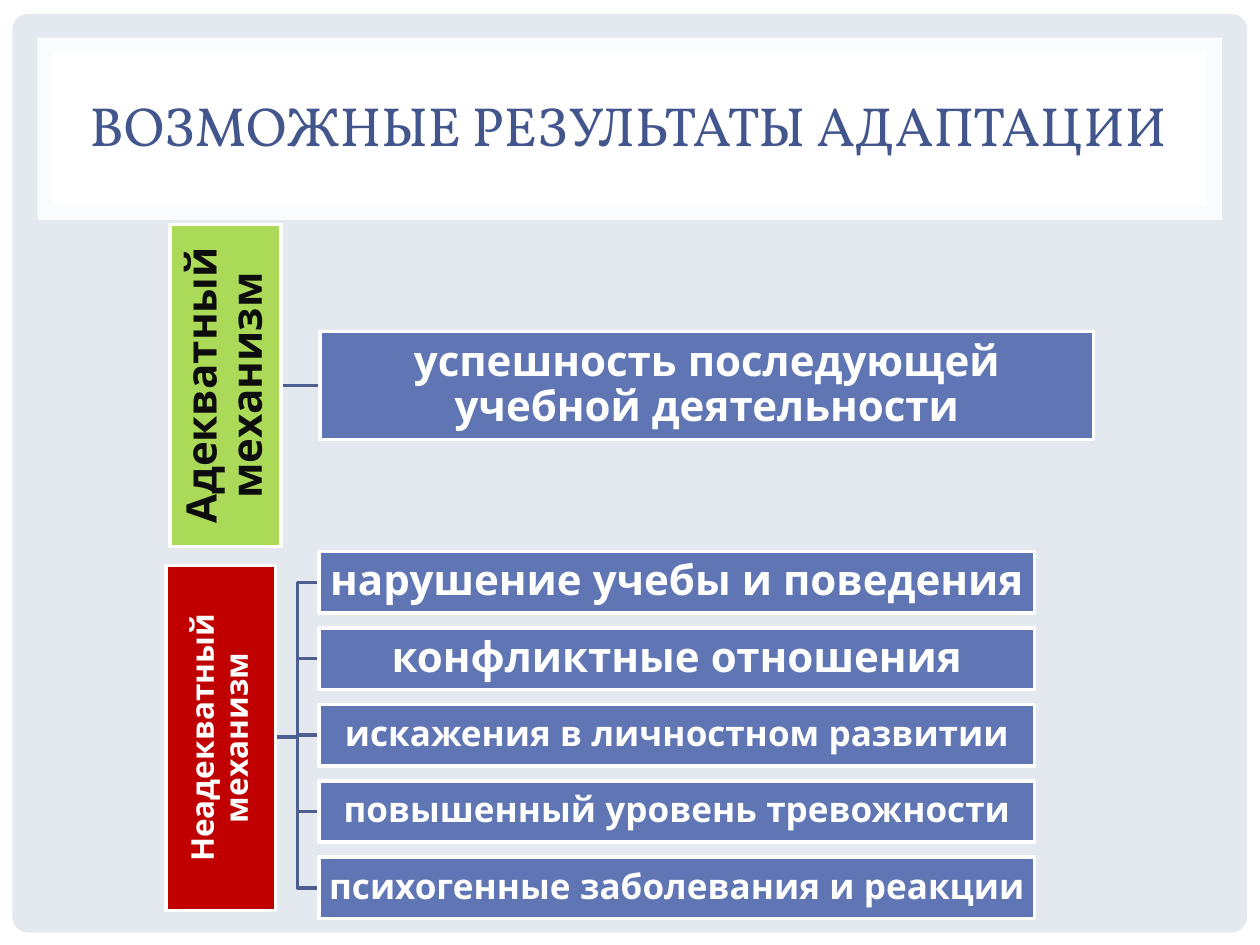
import pptx
import pptx.dml.color
import pptx.enum.shapes
import pptx.enum.text
import pptx.oxml
import pptx.oxml.ns
import pptx.util
from pptx.util import Cm

COLORS = {
    "paper": "E4E9EF",
    "white": "FFFFFF",
    "title": "42568D",
    "branch": "4D5E90",
    "outcome": "6076B4",
    "adequate": "ABD958",
    "inadequate": "C00000",
    "ink": "0D0D0D",
}
OUTCOMES = [
    ("нарушение учебы и поведения", 24),
    ("конфликтные отношения", 24),
    ("искажения в личностном развитии", 20),
    ("повышенный уровень тревожности", 20),
    ("психогенные заболевания и реакции", 20),
]
SHAPES = pptx.enum.shapes.MSO_SHAPE


def color(name):
    """Return the palette colour with this name."""
    return pptx.dml.color.RGBColor.from_string(COLORS[name])


def add_panel(page, kind, place, fill, alpha=None):
    """Add a borderless filled shape, optionally translucent (percent)."""
    panel = page.shapes.add_shape(kind, *map(Cm, place))
    panel.shadow.inherit = False
    panel.fill.solid()
    panel.fill.fore_color.rgb = color(fill)
    panel.line.fill.background()
    if alpha:
        tone = panel.element.spPr.find(".//" + pptx.oxml.ns.qn("a:srgbClr"))
        tone.append(pptx.oxml.parse_xml(
            f'<a:alpha {pptx.oxml.ns.nsdecls("a")} val="{alpha * 1000}"/>'))
    return panel


def write_text(shape, text, size, font, ink, inset=0, bold=False):
    """Write one centred run into a shape."""
    frame = shape.text_frame
    frame.word_wrap = True
    frame.auto_size = pptx.enum.text.MSO_AUTO_SIZE.NONE
    frame.vertical_anchor = pptx.enum.text.MSO_ANCHOR.MIDDLE
    frame.margin_left = frame.margin_right = Cm(inset)
    frame.margin_top = frame.margin_bottom = Cm(inset)
    para = frame.paragraphs[0]
    para.alignment = pptx.enum.text.PP_ALIGN.CENTER
    para.line_spacing = 0.9
    span = para.add_run()
    span.text = text
    span.font.size = pptx.util.Pt(size)
    span.font.name = font
    span.font.bold = bold
    span.font.color.rgb = color(ink)


def add_box(page, place, text, size, fill, ink="white", rotation=0):
    """Add a white-edged diagram box with bold text."""
    box = add_panel(page, SHAPES.RECTANGLE, place, fill)
    box.rotation = rotation
    set_line(box, "white")
    write_text(box, text, size, "League Spartan", ink, 0.04, True)


def set_line(shape, name):
    """Give a shape or connector a two-point line."""
    shape.line.color.rgb = color(name)
    shape.line.width = pptx.util.Pt(2)


def add_link(page, start_x, end_x, y):
    """Add a straight horizontal link."""
    link = page.shapes.add_connector(
        pptx.enum.shapes.MSO_CONNECTOR.STRAIGHT, Cm(start_x), Cm(y), Cm(end_x), Cm(y))
    set_line(link, "branch")
    link.element.spPr.append(pptx.oxml.parse_xml(
        f'<a:effectLst {pptx.oxml.ns.nsdecls("a")}/>'))


def add_elbow(page, start, end):
    """Add an open elbow bending midway between two points."""
    (start_x, start_y), (end_x, end_y) = start, end
    middle = (start_x + end_x) / 2
    builder = page.shapes.build_freeform(Cm(start_x), Cm(start_y))
    corners = [(middle, start_y), (middle, end_y), end]
    builder.add_line_segments([(Cm(x), Cm(y)) for x, y in corners], close=False)
    elbow = builder.convert_to_shape()
    elbow.shadow.inherit = False
    elbow.fill.background()
    set_line(elbow, "branch")


def add_backdrop(page):
    """Add the page frame and the title plate."""
    page.background.fill.solid()
    page.background.fill.fore_color.rgb = color("paper")
    add_panel(page, SHAPES.RECTANGLE, (0, 0, 25.4, 19.05), "white")
    frame = add_panel(page, SHAPES.ROUNDED_RECTANGLE, (0.25, 0.28, 24.89, 18.52), "paper")
    frame.adjustments[0] = 0.017
    add_panel(page, SHAPES.RECTANGLE, (0.76, 0.76, 23.88, 3.68), "white", 83)
    add_panel(page, SHAPES.RECTANGLE, (1.04, 1.04, 23.27, 3.1), "white")


def add_title(page, text):
    """Place and format the title in front of the backdrop."""
    title = page.shapes.title
    title.left, title.top, title.width, title.height = map(Cm, (1.19, 1.14, 22.94, 2.9))
    write_text(title, text, 31.5, "Vollkorn", "title")
    title.element.getparent().append(title.element)


def add_adequate_branch(page):
    """Add the adequate mechanism and its single outcome."""
    add_link(page, 5.64, 6.45, 7.77)
    add_box(page, (1.3, 6.65, 6.5, 2.24), "Адекватный механизм", 24,
            "adequate", "ink", 270)
    add_box(page, (6.45, 6.68, 15.6, 2.18),
            "успешность последующей учебной деятельности", 24, "outcome")


def add_inadequate_branch(page):
    """Add the inadequate mechanism and its evenly spaced outcomes."""
    left, width, height = 6.43, 14.43, 1.24
    tops = [11.12 + 1.54 * row for row in range(len(OUTCOMES))]
    for top in reversed(tops):
        add_elbow(page, (5.56, 14.86), (left, top + height / 2))
    add_box(page, (0.97, 13.77, 6.96, 2.21), "Неадекватный механизм", 18,
            "inadequate", rotation=270)
    for top, (text, size) in zip(tops, OUTCOMES):
        add_box(page, (left, top, width, height), text, size, "outcome")


def main():
    """Build and save the deck."""
    deck = pptx.Presentation()
    deck.slide_width, deck.slide_height = Cm(25.4), Cm(19.05)
    page = deck.slides.add_slide(deck.slide_layouts[5])
    add_backdrop(page)
    add_title(page, "ВОЗМОЖНЫЕ РЕЗУЛЬТАТЫ АДАПТАЦИИ")
    add_adequate_branch(page)
    add_inadequate_branch(page)
    deck.save("out.pptx")


if __name__ == "__main__":
    main()
